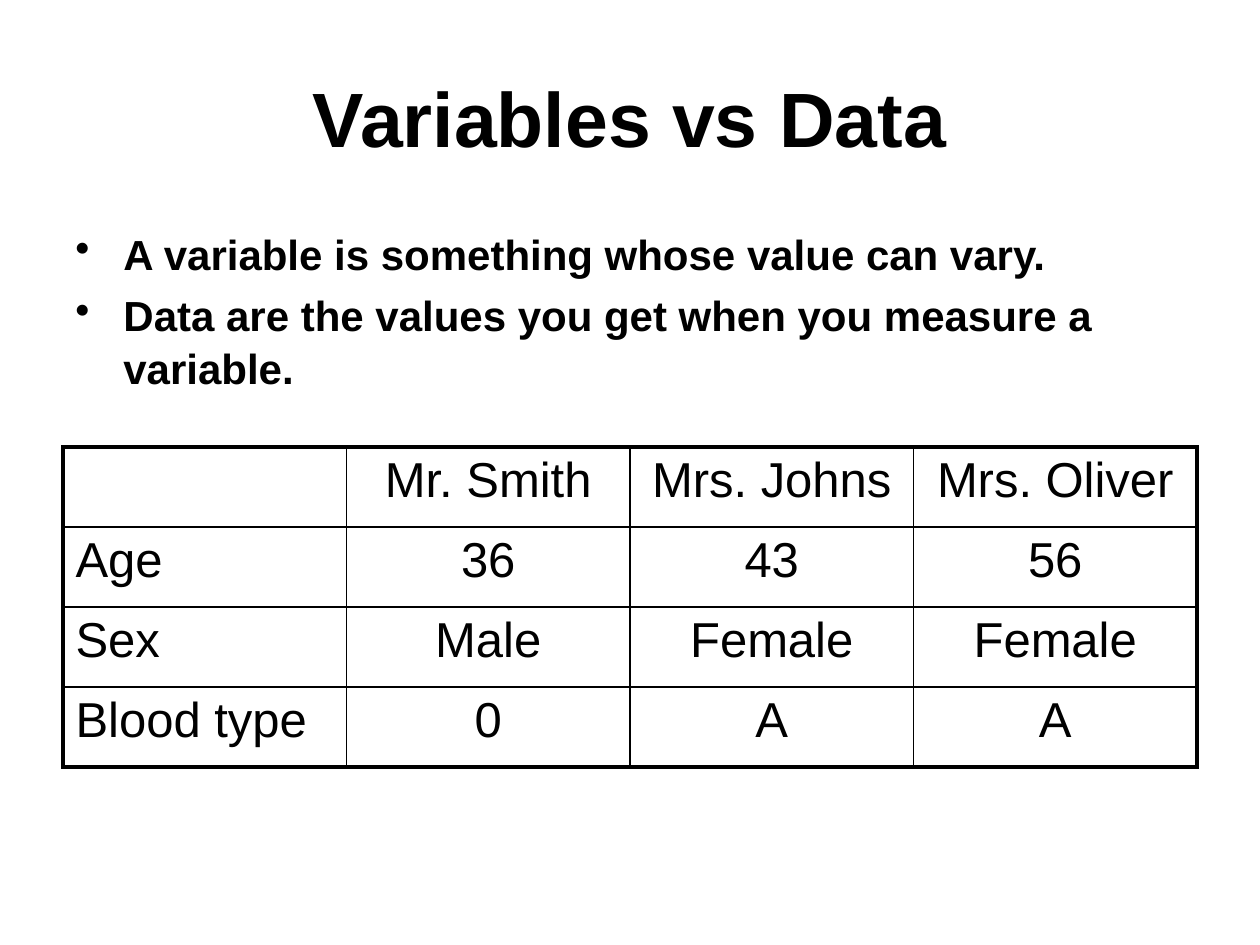
from pptx import Presentation
from pptx.dml.color import RGBColor
from pptx.enum.text import MSO_ANCHOR, PP_ALIGN
from pptx.oxml.xmlchemy import OxmlElement
from pptx.util import Emu, Pt

CENTER, LEFT = PP_ALIGN.CENTER, PP_ALIGN.LEFT
MIDDLE, TOP = MSO_ANCHOR.MIDDLE, MSO_ANCHOR.TOP

TITLE = "Variables vs Data"
BULLETS = [
    "A variable is something whose value can vary.",
    "Data are the values you get when you measure a variable.",
]
PATIENTS = [
    ("", "Mr. Smith", "Mrs. Johns", "Mrs. Oliver"),
    ("Age", "36", "43", "56"),
    ("Sex", "Male", "Female", "Female"),
    ("Blood type", "0", "A", "A"),
]

SLIDE = (1260, 945)
TITLE_BOX = (63, 38, 1134, 157)
BODY_BOX = (63, 220, 1166, 624)
TABLE_BOX = (63, 447, 1134, 320)
HANGING = 48
FONT, BLACK, WHITE = "Arial", "000000", "FFFFFF"
OUTER, INNER = 2.25, 1


def px(n):
    return Emu(round(n * 914400 / 126))


def color(value):
    return RGBColor.from_string(value)


def style(p, size, bold=False, align=LEFT):
    p.alignment = align
    for r in p.runs:
        r.font.name = FONT
        r.font.size = Pt(size)
        r.font.bold = bold
        r.font.color.rgb = color(BLACK)


def add_text(s, box, paragraphs, anchor=TOP):
    tf = s.shapes.add_textbox(*map(px, box)).text_frame
    tf.word_wrap = True
    tf.vertical_anchor = anchor
    tf.text = "\n".join(paragraphs)
    return tf.paragraphs


def add_bullet(p):
    pPr = p._p.get_or_add_pPr()
    pPr.set("marL", str(px(HANGING)))
    pPr.set("indent", str(-px(HANGING)))
    bullet = OxmlElement("a:buChar")
    bullet.set("char", "•")
    pPr.append(bullet)


def set_borders(cell, widths):
    """Draw the left, right, top and bottom borders, widths in points."""
    tcPr = cell._tc.get_or_add_tcPr()
    for i, (side, width) in enumerate(zip("LRTB", widths)):
        ln = OxmlElement(f"a:ln{side}")
        ln.set("w", str(Pt(width)))
        fill = OxmlElement("a:solidFill")
        rgb = OxmlElement("a:srgbClr")
        rgb.set("val", BLACK)
        fill.append(rgb)
        ln.append(fill)
        tcPr.insert(i, ln)


def add_patient_table(s):
    rows, cols = len(PATIENTS), len(PATIENTS[0])
    table = s.shapes.add_table(rows, cols, *map(px, TABLE_BOX)).table
    table.first_row = table.horz_banding = False
    for i, values in enumerate(PATIENTS):
        for j, value in enumerate(values):
            cell = table.cell(i, j)
            cell.fill.background()
            cell.text = value
            p = cell.text_frame.paragraphs[0]
            style(p, 28, align=CENTER if j else LEFT)
            p.space_before = Pt(5.6)
            on_edge = (j == 0, j == cols - 1, i == 0, i == rows - 1)
            set_borders(cell, [OUTER if edge else INNER for edge in on_edge])


def main():
    prs = Presentation()
    prs.slide_width, prs.slide_height = map(px, SLIDE)
    s = prs.slides.add_slide(prs.slide_layouts[6])
    s.background.fill.solid()
    s.background.fill.fore_color.rgb = color(WHITE)

    for p in add_text(s, TITLE_BOX, [TITLE], MIDDLE):
        style(p, 44, bold=True, align=CENTER)
    for p in add_text(s, BODY_BOX, BULLETS):
        style(p, 24, bold=True)
        p.line_spacing = 1.05
        p.space_before = Pt(4.8)
        add_bullet(p)
    add_patient_table(s)
    prs.save("out.pptx")


if __name__ == "__main__":
    main()
